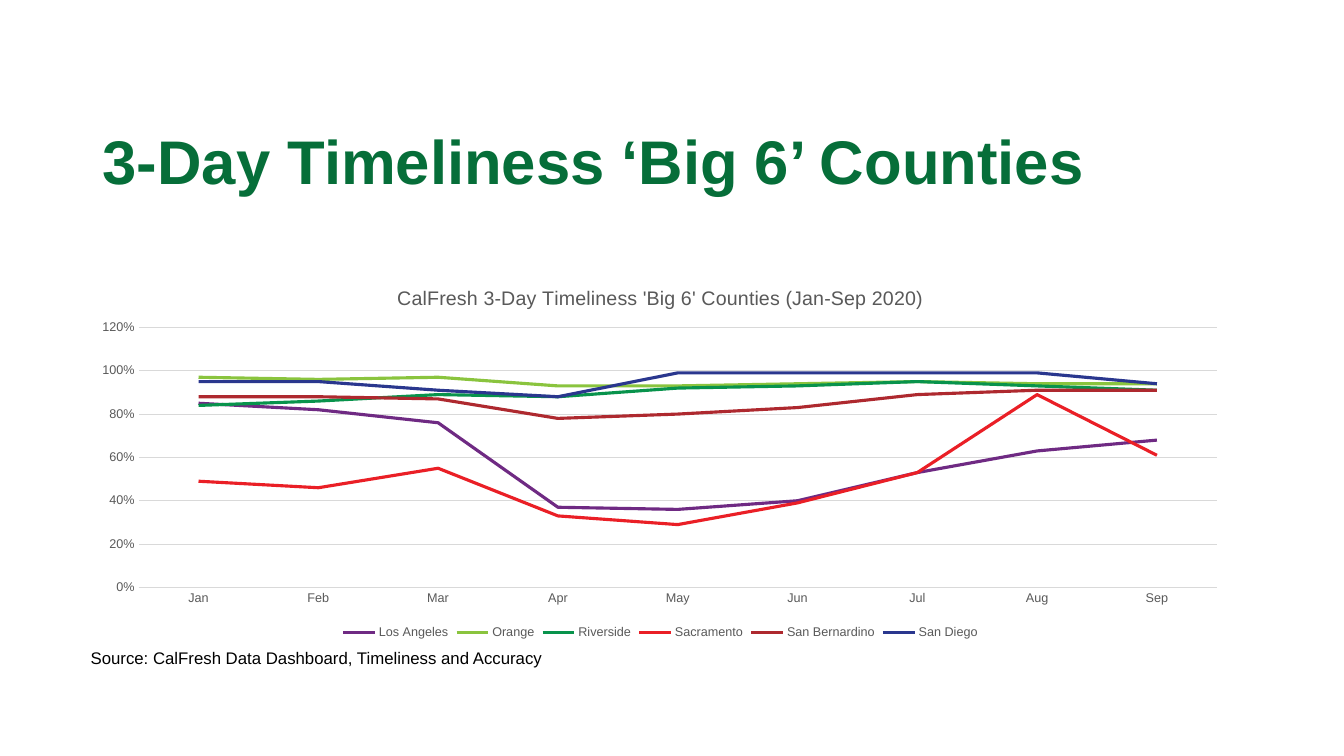
import pptx
import pptx.util
import pptx.chart.data
import pptx.dml.color
import pptx.enum.chart
import pptx.enum.text
import pptx.oxml

SIZE = (1333, 750)
HEAD = {"text": "3-Day Timeliness ‘Big 6’ Counties", "box": (92, 91, 1150, 145)}
NOTE = {"text": "Source: CalFresh Data Dashboard, Timeliness and Accuracy", "box": (80, 638, 472, 30)}
PLOT = {"text": "CalFresh 3-Day Timeliness 'Big 6' Counties (Jan-Sep 2020)", "box": (80, 265, 1150, 374)}
MONTHS = ["Jan", "Feb", "Mar", "Apr", "May", "Jun", "Jul", "Aug", "Sep"]
RATES = [
    ("Los Angeles", "6F2A83", (0.85, 0.82, 0.76, 0.37, 0.36, 0.4, 0.53, 0.63, 0.68)),
    ("Orange", "8AC43E", (0.97, 0.96, 0.97, 0.93, 0.93, 0.94, 0.95, 0.94, 0.94)),
    ("Riverside", "08934C", (0.84, 0.86, 0.89, 0.88, 0.92, 0.93, 0.95, 0.93, 0.91)),
    ("Sacramento", "EA1F26", (0.49, 0.46, 0.55, 0.33, 0.29, 0.39, 0.53, 0.89, 0.61)),
    ("San Bernardino", "AE292F", (0.88, 0.88, 0.87, 0.78, 0.8, 0.83, 0.89, 0.91, 0.91)),
    ("San Diego", "2A378E", (0.95, 0.95, 0.91, 0.88, 0.99, 0.99, 0.99, 0.99, 0.94)),
]
THEME = {
    "font": "Arial", "green": "066E39", "black": "000000", "gray": "595959", "rule": "D9D9D9",
    "head": 44, "title": 14, "note": 12, "label": 9, "line": 2.25, "thin": 0.75,
}
SCALE = 9144


def emu(box):
    return [n * SCALE for n in box]


def rgb(code):
    return pptx.dml.color.RGBColor.from_string(code)


def style(font, size, color, bold=False):
    font.name = THEME["font"]
    font.size = pptx.util.Pt(THEME[size])
    font.color.rgb = rgb(THEME[color])
    font.bold = bold


def stroke(line, color, width):
    line.color.rgb = rgb(color)
    line.width = pptx.util.Pt(THEME[width])


def write(slide, item, size, color, bold, wrap, anchor):
    frame = slide.shapes.add_textbox(*emu(item["box"])).text_frame
    frame.text = item["text"]
    frame.word_wrap = wrap
    frame.vertical_anchor = anchor
    style(frame.paragraphs[0].runs[0].font, size, color, bold)
    return frame


def layout(**parts):
    tags = "".join(f'<c:{key} val="{val}"/>' for key, val in parts.items())
    space = "http://schemas.openxmlformats.org/drawingml/2006/chart"
    return pptx.oxml.parse_xml(
        f'<c:layout xmlns:c="{space}"><c:manualLayout>{tags}</c:manualLayout></c:layout>')


def place(chart):
    root = chart.element
    for old in root.xpath("c:chart/c:title/c:layout | c:chart/c:plotArea/c:layout"):
        old.getparent().remove(old)
    root.xpath("c:chart/c:title/c:tx")[0].addnext(
        layout(xMode="edge", yMode="edge", x=0.27, y=0.04))
    root.xpath("c:chart/c:plotArea")[0].insert(0, layout(
        layoutTarget="inner", xMode="edge", yMode="edge", x=0.05, y=0.16, w=0.93, h=0.69))


def draw(slide):
    data = pptx.chart.data.CategoryChartData(number_format="0%")
    data.categories = MONTHS
    for name, _, vals in RATES:
        data.add_series(name, vals)
    kinds = pptx.enum.chart
    chart = slide.shapes.add_chart(kinds.XL_CHART_TYPE.LINE, *emu(PLOT["box"]), data).chart
    style(chart.font, "label", "gray")
    chart.has_title = True
    title = chart.chart_title
    title.text_frame.text = PLOT["text"]
    title.include_in_layout = False
    style(title.text_frame.paragraphs[0].runs[0].font, "title", "gray")
    chart.has_legend = True
    chart.legend.position = kinds.XL_LEGEND_POSITION.BOTTOM
    chart.legend.include_in_layout = False
    style(chart.legend.font, "label", "gray")
    for axis in (chart.category_axis, chart.value_axis):
        axis.major_tick_mark = axis.minor_tick_mark = kinds.XL_TICK_MARK.NONE
        style(axis.tick_labels.font, "label", "gray")
    stroke(chart.category_axis.format.line, THEME["rule"], "thin")
    rates = chart.value_axis
    rates.minimum_scale, rates.maximum_scale, rates.major_unit = 0, 1.2, 0.2
    rates.format.line.fill.background()
    rates.has_major_gridlines = True
    stroke(rates.major_gridlines.format.line, THEME["rule"], "thin")
    rates.tick_labels.number_format = "0%"
    rates.tick_labels.number_format_is_linked = False
    chart.plots[0].vary_by_categories = False
    for series, (_, color, _) in zip(chart.plots[0].series, RATES):
        series.smooth = False
        series.marker.style = kinds.XL_MARKER_STYLE.NONE
        stroke(series.format.line, color, "line")
    place(chart)


def main():
    deck = pptx.Presentation()
    deck.slide_width, deck.slide_height = emu(SIZE)
    slide = deck.slides.add_slide(deck.slide_layouts[6])
    anchor = pptx.enum.text.MSO_ANCHOR
    head = write(slide, HEAD, "head", "green", True, True, anchor.MIDDLE)
    head.paragraphs[0].line_spacing = 0.9
    draw(slide)
    note = write(slide, NOTE, "note", "black", False, False, anchor.TOP)
    note.auto_size = pptx.enum.text.MSO_AUTO_SIZE.SHAPE_TO_FIT_TEXT
    deck.save("out.pptx")


if __name__ == "__main__":
    main()
